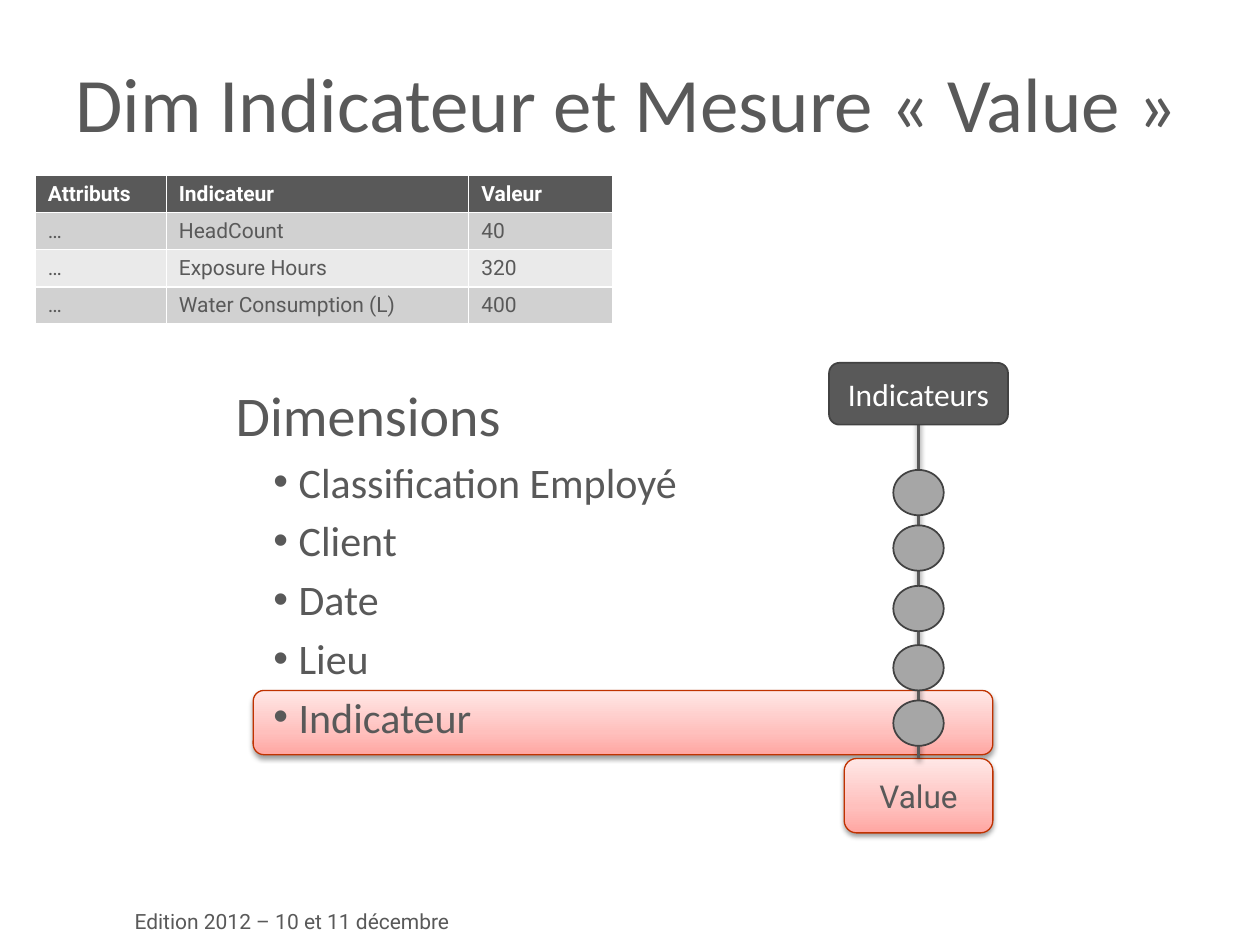
"""Build the slide on the indicator dimension and the Value measure."""
from lxml import etree
from pptx import Presentation
from pptx.dml.color import RGBColor
from pptx.enum.shapes import MSO_CONNECTOR, MSO_SHAPE
from pptx.enum.text import MSO_ANCHOR, MSO_AUTO_SIZE, PP_ALIGN
from pptx.oxml.ns import qn
from pptx.util import Emu, Pt

PX = 9144
WIDTH, HEIGHT = 1000, 750
LEFT, CENTER = PP_ALIGN.LEFT, PP_ALIGN.CENTER
MIDDLE, FIXED = MSO_ANCHOR.MIDDLE, MSO_AUTO_SIZE.NONE
ROUNDED, OVAL = MSO_SHAPE.ROUNDED_RECTANGLE, MSO_SHAPE.OVAL
STRAIGHT = MSO_CONNECTOR.STRAIGHT

WHITE = RGBColor(0xFF, 0xFF, 0xFF)
DARK = RGBColor(0x59, 0x59, 0x59)
EDGE = RGBColor(0x42, 0x42, 0x42)
DOT = RGBColor(0xA6, 0xA6, 0xA6)
BANDS = [RGBColor(0xEA, 0xEA, 0xEA), RGBColor(0xD1, 0xD1, 0xD1)]
RED = RGBColor(0xC0, 0x32, 0x00)
PINKS = [(0, "FFA6A2"), (35, "FFC0BD"), (100, "FFE7E6")]

TITLE = "Dim Indicateur et Mesure «\u00a0Value\u00a0»"
FOOTER = "Edition 2012 – 10 et 11 décembre"
HEADING = "Dimensions"
DIMENSIONS = ["Classification Employé", "Client", "Date", "Lieu", "Indicateur"]
ROWS = [
    ("Attributs", "Indicateur", "Valeur"),
    ("…", "HeadCount", "40"),
    ("…", "Exposure Hours", "320"),
    ("…", "Water Consumption (L)", "400"),
]
COLUMNS = [104, 240, 114]
ROW_HEIGHT = 27
SPINE = 729
DOT_TOPS = [373, 417, 465, 512, 556]


def px(*values):
    return [Emu(v * PX) for v in values]


def place(shape, *box):
    shape.left, shape.top, shape.width, shape.height = px(*box)


def add_run(p, text, size, font="Calibri", color=DARK, bold=False):
    r = p.add_run()
    r.text = text
    r.font.size, r.font.name, r.font.bold = Pt(size), font, bold
    r.font.color.rgb = color


def add_shadow(effects):
    shadow = etree.SubElement(effects, qn("a:outerShdw"), blurRad="39370", dist="20320",
                              dir="5400000", rotWithShape="0")
    color = etree.SubElement(shadow, qn("a:srgbClr"), val="000000")
    etree.SubElement(color, qn("a:alpha"), val="38000")


def add_box(s, kind, box, fill, line, weight):
    sp = s.shapes.add_shape(kind, *px(*box))
    sp.shadow.inherit = False
    sp.line.color.rgb, sp.line.width = line, Pt(weight)
    if fill is not None:
        sp.fill.solid()
        sp.fill.fore_color.rgb = fill
    return sp


def add_pink_box(s, box):
    sp = add_box(s, ROUNDED, box, None, RED, 0.75)
    sp.fill.gradient()
    sp.fill.gradient_angle = 90
    stops = sp._element.spPr.find(".//" + qn("a:gsLst"))
    stops.clear()
    for position, color in PINKS:
        stop = etree.SubElement(stops, qn("a:gs"), pos=str(position * 1000))
        etree.SubElement(stop, qn("a:srgbClr"), val=color)
    add_shadow(sp._element.spPr.find(qn("a:effectLst")))
    return sp


def add_label(sp, text, font, color):
    tf = sp.text_frame
    tf.vertical_anchor = MIDDLE
    p = tf.paragraphs[0]
    p.alignment = CENTER
    add_run(p, text, 18, font, color)


def add_background(s):
    bar = add_pink_box(s, (201, 548, 587, 51))
    footer = s.shapes.add_textbox(*px(97, 716, 277, 30))
    tf = footer.text_frame
    tf.word_wrap = False
    add_run(tf.paragraphs[0], FOOTER, 12, "Roboto")
    for sp in (bar, footer):
        s.shapes._spTree.insert(2, sp._element)


def add_title(s):
    title = s.shapes.title
    place(title, 50, 30, 900, 101)
    title.text_frame.vertical_anchor = MIDDLE
    p = title.text_frame.paragraphs[0]
    p.alignment = LEFT
    add_run(p, TITLE, 44)


def add_data(s):
    frame = s.shapes.add_table(len(ROWS), len(COLUMNS),
                               *px(28, 139, sum(COLUMNS), ROW_HEIGHT * len(ROWS)))
    table = frame.table
    for column, width in zip(table.columns, COLUMNS):
        column.width = Emu(width * PX)
    for i, texts in enumerate(ROWS):
        header = i == 0
        for j, text in enumerate(texts):
            cell = table.cell(i, j)
            cell.fill.solid()
            cell.fill.fore_color.rgb = DARK if header else BANDS[i % 2]
            add_run(cell.text_frame.paragraphs[0], text, 12, "Roboto",
                    WHITE if header else DARK, header)


def add_dimensions(s):
    body = s.placeholders[1]
    place(body, 177, 297, 685, 314)
    tf = body.text_frame
    tf.auto_size = FIXED
    p = tf.paragraphs[0]
    pPr = p._p.get_or_add_pPr()
    pPr.set("marL", "0")
    pPr.set("indent", "0")
    etree.SubElement(pPr, qn("a:buNone"))
    p.space_before = Pt(0)
    add_run(p, HEADING, 32)
    for text in DIMENSIONS:
        p = tf.add_paragraph()
        p.level = 1
        pPr = p._p.get_or_add_pPr()
        pPr.set("marL", str(50 * PX))
        pPr.set("indent", str(-20 * PX))
        etree.SubElement(pPr, qn("a:buFont"), typeface="Arial")
        etree.SubElement(pPr, qn("a:buChar"), char="•")
        add_run(p, text, 24)


def add_indicators(s):
    value = add_pink_box(s, (SPINE - 59, 602, 118, 59))
    add_label(value, "Value", "Roboto", DARK)

    spine = s.shapes.add_connector(STRAIGHT, *px(SPINE, 321, SPINE, 602))
    spine.end_connect(value, 0)
    spine.line.color.rgb, spine.line.width = DARK, Pt(2)
    add_shadow(etree.SubElement(spine._element.spPr, qn("a:effectLst")))

    for top in DOT_TOPS:
        add_box(s, OVAL, (SPINE - 20, top, 40, 36), DOT, EDGE, 1)
    header = add_box(s, ROUNDED, (SPINE - 71, 288, 142, 49), DARK, EDGE, 1)
    add_label(header, "Indicateurs", "Calibri", WHITE)


def main():
    prs = Presentation()
    prs.slide_width, prs.slide_height = px(WIDTH, HEIGHT)
    s = prs.slides.add_slide(prs.slide_layouts[1])
    add_background(s)
    add_title(s)
    add_data(s)
    add_dimensions(s)
    add_indicators(s)
    prs.save("out.pptx")


if __name__ == "__main__":
    main()
